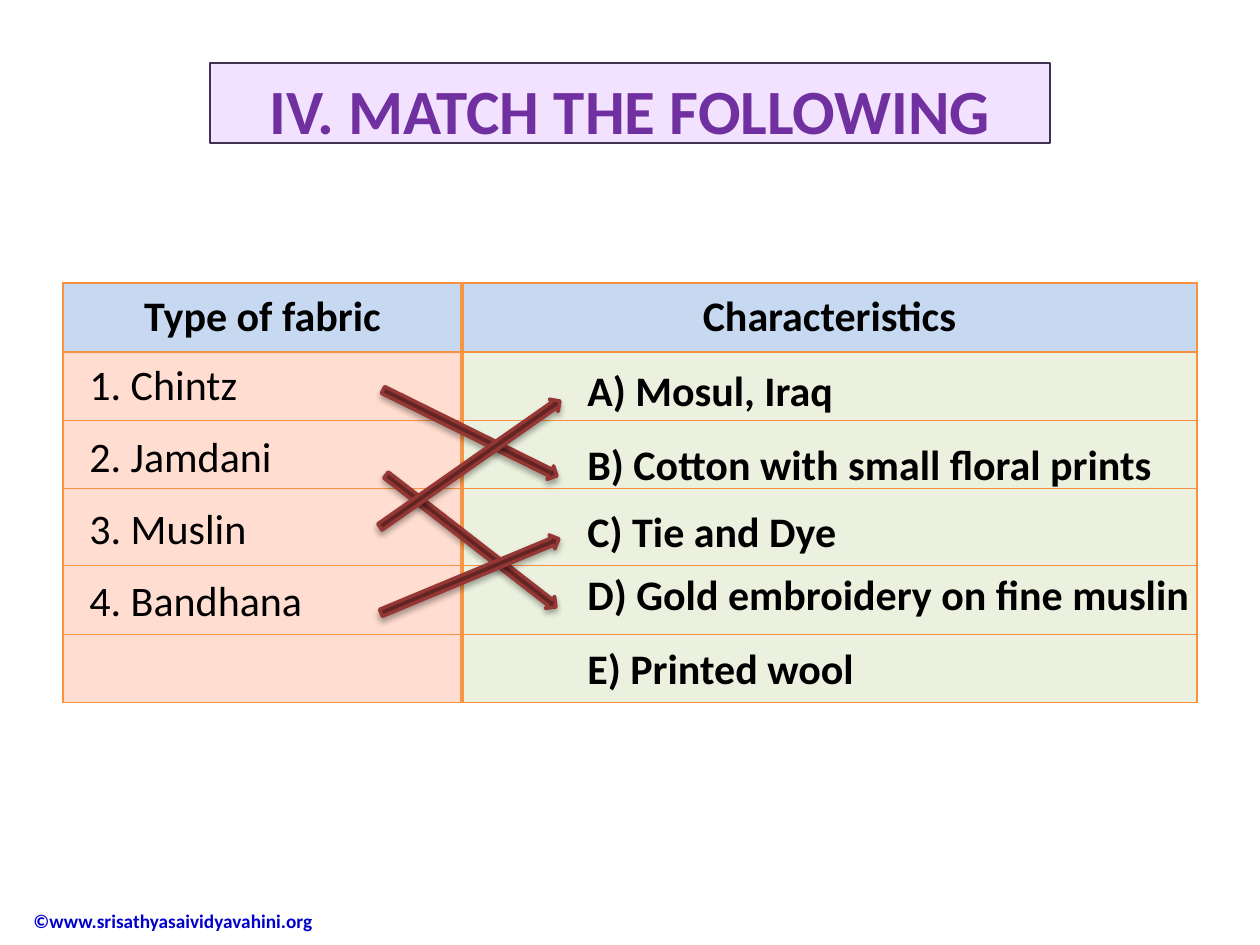
import math
from lxml import etree
from pptx import Presentation
from pptx import util as u
from pptx.dml.color import RGBColor
from pptx.enum import shapes, text
from pptx.oxml import ns

PX = 914400 // 126
FONT = "Calibri"
FABRICS = ["1. Chintz", "2. Jamdani", "3. Muslin", "4. Bandhana"]
CHARACTERISTICS = [
    ("A) Mosul, Iraq", 358),
    ("B) Cotton with small floral prints", 432),
    ("C) Tie and Dye", 499),
    ("D) Gold embroidery on fine muslin", 562),
    ("E) Printed wool", 636),
]
# Start and end of each matching arrow
MATCHES = [
    ((383, 390), (557, 476)),
    ((386, 475), (556, 607)),
    ((380, 527), (560, 401)),
    ((381, 613), (559, 539)),
]


def px(*lengths):
    return [u.Emu(round(length * PX)) for length in lengths]


def colour(hex_string):
    return RGBColor.from_string(hex_string)


def add_child(parent, tag, **attributes):
    child = etree.SubElement(parent, ns.qn(tag))
    for name, value in attributes.items():
        child.set(name, str(value))
    return child


def paint(shape, fill, line, width):
    shape.fill.solid()
    shape.fill.fore_color.rgb = colour(fill)
    shape.line.color.rgb = colour(line)
    shape.line.width = u.Pt(width)


def write(frame, words, size=24, color="000000", bold=False,
          align=text.PP_ALIGN.LEFT, anchor=text.MSO_ANCHOR.TOP):
    frame.word_wrap = True
    frame.vertical_anchor = anchor
    paragraph = frame.paragraphs[0]
    paragraph.alignment = align
    run = paragraph.add_run()
    run.text = words
    run.font.name = FONT
    run.font.size = u.Pt(size)
    run.font.bold = bold
    run.font.color.rgb = colour(color)


def add_label(slide, words, box, **style):
    label = slide.shapes.add_textbox(*px(*box))
    write(label.text_frame, words, **style)


def add_title(slide, words):
    title = slide.shapes.title
    title.left, title.top, title.width, title.height = px(210, 63, 840, 80)
    paint(title, "F2E1FF", "403152", 0.75)
    frame = title.text_frame
    frame.auto_size = text.MSO_AUTO_SIZE.NONE
    frame.margin_top, frame.margin_bottom = px(9, 0)
    write(frame, words, size=36, color="7030A0", bold=True,
          align=text.PP_ALIGN.CENTER)


def set_borders(cell, **sides):
    properties = cell._tc.get_or_add_tcPr()
    for side, (hex_string, width) in sides.items():
        border = add_child(properties, f"a:ln{side}", w=u.Pt(width))
        solid = add_child(border, "a:solidFill")
        add_child(solid, "a:srgbClr", val=hex_string)


def add_match_table(slide):
    widths = [399, 735]
    heights = [69, 69, 68, 77, 69, 68]
    frame = slide.shapes.add_table(
        len(heights), len(widths), *px(63, 283, sum(widths), sum(heights)))
    table = frame.table
    table.first_row = table.horz_banding = False
    for column, width in zip(table.columns, px(*widths)):
        column.width = width
    for row, height in zip(table.rows, px(*heights)):
        row.height = height

    thin, divider = ("F69240", 0.75), ("F79646", 2)
    for row in range(len(heights)):
        for column, body_fill in enumerate(["FFDDD0", "EBF1DE"]):
            cell = table.cell(row, column)
            set_borders(cell, L=divider if column else thin,
                        R=thin if column else divider, T=thin, B=thin)
            cell.fill.solid()
            cell.fill.fore_color.rgb = colour(body_fill if row else "C6D9F1")

    for column, heading in enumerate(["Type of fabric", "Characteristics"]):
        cell = table.cell(0, column)
        cell.vertical_anchor = text.MSO_ANCHOR.MIDDLE
        write(cell.text_frame, heading, bold=True,
              align=text.PP_ALIGN.CENTER, anchor=text.MSO_ANCHOR.MIDDLE)


def add_match_arrow(slide, start, end, thickness=15):
    (x1, y1), (x2, y2) = start, end
    length = math.hypot(x2 - x1, y2 - y1)
    left = (x1 + x2 - length) / 2
    top = (y1 + y2 - thickness) / 2
    arrow = slide.shapes.add_shape(
        shapes.MSO_SHAPE.RIGHT_ARROW, *px(left, top, length, thickness))
    arrow.rotation = math.degrees(math.atan2(y2 - y1, x2 - x1))
    paint(arrow, "632523", "953735", 2)
    # Soft shadow straight below
    arrow.shadow.inherit = False
    effects = arrow._element.spPr.find(ns.qn("a:effectLst"))
    shadow = add_child(effects, "a:outerShdw", blurRad=u.Pt(3.5),
                       dist=u.Pt(2.2), dir=90 * 60000, rotWithShape=0)
    tint = add_child(shadow, "a:srgbClr", val="000000")
    add_child(tint, "a:alpha", val=32000)


def main():
    deck = Presentation()
    deck.slide_width, deck.slide_height = u.Inches(10), u.Inches(7.5)
    slide = deck.slides.add_slide(deck.slide_layouts[5])

    # Title, copyright and table
    add_title(slide, "IV. MATCH THE FOLLOWING")
    add_label(slide, "©www.srisathyasaividyavahini.org", (21, 895, 317, 52),
              size=11, color="0000CC", bold=True,
              anchor=text.MSO_ANCHOR.MIDDLE)
    add_match_table(slide)

    # Entries on both sides
    for index, fabric in enumerate(FABRICS):
        add_label(slide, fabric, (77, 352 + 72 * index, 248, 49))
    for characteristic, top in CHARACTERISTICS:
        add_label(slide, characteristic, (575, top, 640, 63), bold=True)

    # Answers
    for start, end in MATCHES:
        add_match_arrow(slide, start, end)

    deck.save("out.pptx")


if __name__ == "__main__":
    main()
